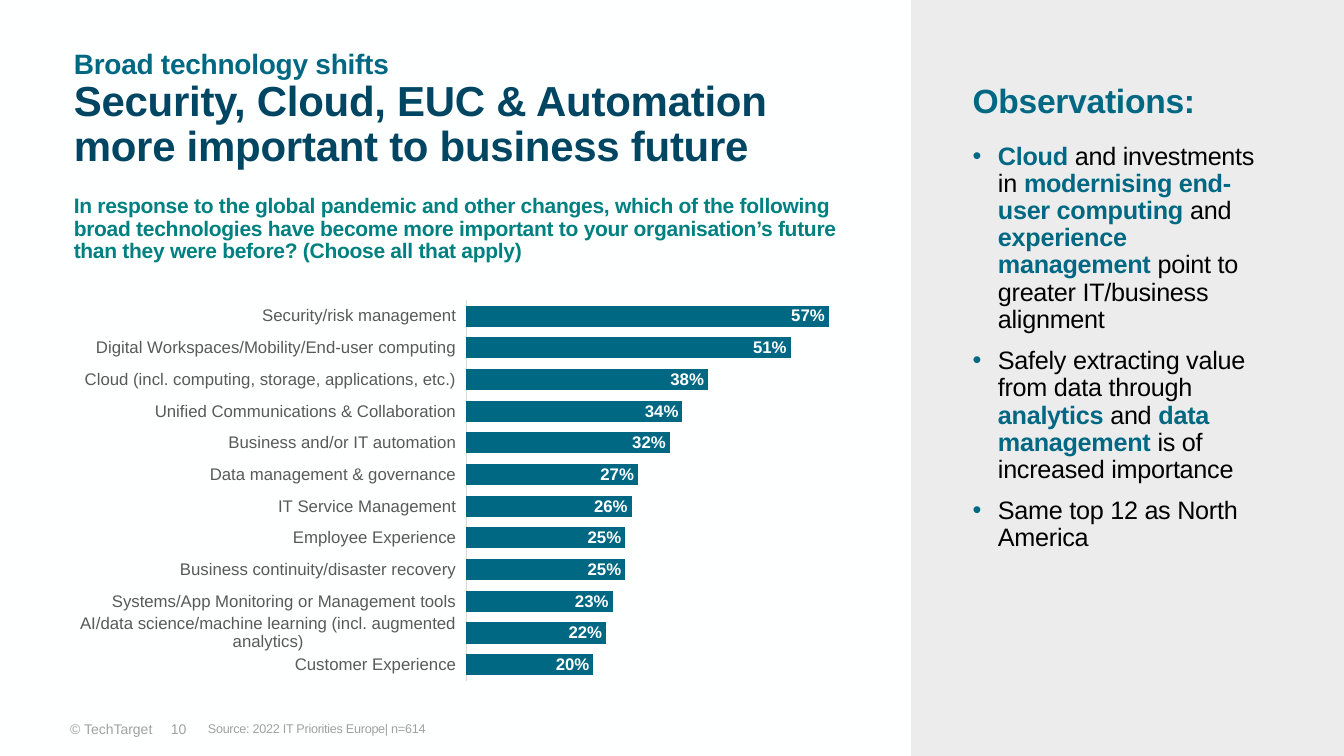
from lxml import etree
from pptx import Presentation
from pptx.chart.data import CategoryChartData
from pptx.dml.color import RGBColor
from pptx.enum.chart import XL_CHART_TYPE, XL_LABEL_POSITION, XL_TICK_LABEL_POSITION, XL_TICK_MARK
from pptx.enum.shapes import MSO_SHAPE
from pptx.enum.text import MSO_ANCHOR, MSO_AUTO_SIZE, PP_ALIGN
from pptx.oxml import parse_xml
from pptx.oxml.ns import nsdecls, qn
from pptx.util import Cm, Pt

BAR = XL_CHART_TYPE.BAR_CLUSTERED
INSIDE_END = XL_LABEL_POSITION.INSIDE_END
LABELS_LOW = XL_TICK_LABEL_POSITION.LOW
NO_TICK = XL_TICK_MARK.NONE
TOP, MIDDLE = MSO_ANCHOR.TOP, MSO_ANCHOR.MIDDLE
LEFT, RIGHT = PP_ALIGN.LEFT, PP_ALIGN.RIGHT

TEAL, NAVY, GREEN = "006883", "004562", "008080"
BLACK, GREY, WHITE = "000000", "A0A0A0", "FEFFFF"


def style(font, size, color, bold=False):
    font.name, font.size, font.bold = "Arial", Pt(size), bold
    font.color.rgb = RGBColor.from_string(color)


def set_box(box, left, top, width, height, inset, anchor=TOP):
    """Place a text shape and return its first paragraph."""
    box.left, box.top, box.width, box.height = Cm(left), Cm(top), Cm(width), Cm(height)
    frame = box.text_frame
    frame.word_wrap, frame.auto_size = True, MSO_AUTO_SIZE.NONE
    frame.vertical_anchor = anchor
    frame.margin_left = frame.margin_right = Cm(inset)
    frame.margin_top = frame.margin_bottom = Cm(min(inset, 0.13))
    para = frame.paragraphs[0]
    para.alignment = LEFT
    return para


deck = Presentation()
deck.slide_width, deck.slide_height = Cm(33.87), Cm(19.05)
page = deck.slides.add_slide(deck.slide_layouts[5])
page.background.fill.solid()
page.background.fill.fore_color.rgb = RGBColor.from_string(WHITE)

# Side panel
panel = page.shapes.add_shape(MSO_SHAPE.RECTANGLE, Cm(22.96), 0, Cm(10.91), Cm(19.05))
panel.shadow.inherit = False
panel.fill.solid()
panel.fill.fore_color.rgb = RGBColor.from_string("ECECEC")
panel.line.fill.background()

# Title with its smaller first line
title = set_box(page.shapes.title, 1.73, 1.32, 20.04, 2.92, 0.13, MIDDLE)
title.line_spacing = 0.9
topic = title.add_run()
topic.text = "Broad technology shifts"
style(topic.font, 20, TEAL, True)
title.add_line_break()
headline = title.add_run()
headline.text = "Security, Cloud, EUC & Automation more important to business future"
style(headline.font, 30, NAVY, True)

# Single-paragraph texts: text, place, inset, anchor, size, colour, bold, alignment
texts = [
    ("In response to the global pandemic and other changes, which of the following broad "
     "technologies have become more important to your organisation’s future than they were "
     "before? (Choose all that apply)",
     (1.73, 4.83, 20.04, 1.9), 0.13, MIDDLE, 15, GREEN, True, LEFT),
    ("Observations:", (24.51, 1.32, 7.62, 2.54), 0, MIDDLE, 24, TEAL, True, LEFT),
    ("Source: 2022 IT Priorities Europe| n=614",
     (5.11, 18.08, 16.59, 0.91), 0.13, TOP, 9, GREY, False, LEFT),
    ("© TechTarget", (1.07, 18.03, 3.02, 0.69), 0.25, TOP, 10, GREY, False, RIGHT),
    ("10", (4.06, 18.03, 1.47, 0.69), 0.25, TOP, 10, GREY, False, LEFT),
]
tight_paras = [title]
for text, place, inset, anchor, size, color, bold, align in texts:
    box = page.shapes.add_textbox(0, 0, 0, 0)
    para = set_box(box, *place, inset, anchor)
    para.alignment = align
    run = para.add_run()
    run.text = text
    style(run.font, size, color, bold)
    if size != 10:
        para.line_spacing = 0.9
        tight_paras.append(para)

# Observations: (text, highlighted) spans per bullet
observations = [
    [("Cloud", True), (" and investments in ", False),
     ("modernising end-user computing ", True), ("and ", False),
     ("experience management ", True),
     ("point to greater IT/business alignment", False)],
    [("Safely extracting value from data through ", False), ("analytics", True),
     (" and ", False), ("data management", True),
     (" is of increased importance", False)],
    [("Same top 12 as North America", False)],
]
notes = page.shapes.add_textbox(0, 0, 0, 0)
first = set_box(notes, 24.51, 3.61, 7.62, 13.46, 0)
for index, spans in enumerate(observations):
    para = notes.text_frame.add_paragraph() if index else first
    para.line_spacing, para.space_after = 0.9, Pt(10)
    props = para._p.get_or_add_pPr()
    props.set("marL", str(Cm(0.64)))
    props.set("indent", str(-Cm(0.64)))
    bullet_color = etree.SubElement(props, qn("a:buClr"))
    etree.SubElement(bullet_color, qn("a:srgbClr")).set("val", TEAL)
    etree.SubElement(props, qn("a:buFont")).set("typeface", "Arial")
    etree.SubElement(props, qn("a:buChar")).set("char", "•")
    for text, highlighted in spans:
        span = para.add_run()
        span.text = text
        style(span.font, 18, TEAL if highlighted else BLACK, highlighted)
    tight_paras.append(para)

# Slightly tightened letter spacing
for para in tight_paras:
    for span in para.runs:
        span.font._element.set("spc", "-20")

# Bar chart, listed from bottom to top
shares = {
    "Customer Experience": 0.20,
    "AI/data science/machine learning (incl. augmented analytics)": 0.22,
    "Systems/App Monitoring or Management tools": 0.23,
    "Business continuity/disaster recovery": 0.25,
    "Employee Experience": 0.25,
    "IT Service Management": 0.26,
    "Data management & governance": 0.27,
    "Business and/or IT automation": 0.32,
    "Unified Communications & Collaboration": 0.34,
    "Cloud (incl. computing, storage, applications, etc.)": 0.38,
    "Digital Workspaces/Mobility/End-user computing": 0.51,
    "Security/risk management": 0.57,
}
data = CategoryChartData(number_format="0%")
data.categories = list(shares)
data.add_series("Series 1", list(shares.values()))
chart = page.shapes.add_chart(BAR, Cm(1.73), Cm(7.37), Cm(20.04), Cm(9.98), data).chart
chart.has_legend = chart.has_title = False
style(chart.font, 10, BLACK)

names = chart.category_axis
names.major_tick_mark = names.minor_tick_mark = NO_TICK
names.tick_label_position = LABELS_LOW
names.format.line.color.rgb = RGBColor.from_string("D9D9D9")
names.format.line.width = Pt(0.75)
style(names.tick_labels.font, 12, "595959")

scale = chart.value_axis
scale.minimum_scale, scale.maximum_scale = 0, 0.6
scale.has_major_gridlines = False
scale.visible = False

plot = chart.plots[0]
plot.gap_width, plot.vary_by_categories = 50, False
bars = plot.series[0]
bars.format.fill.solid()
bars.format.fill.fore_color.rgb = RGBColor.from_string(TEAL)
labels = bars.data_labels
labels.show_value, labels.position = True, INSIDE_END
labels.number_format, labels.number_format_is_linked = "0%", False
style(labels.font, 12, WHITE, True)

# Fixed plot area, leaving the left half to the category names
plot_area = chart._chartSpace.chart.plotArea
for old_layout in plot_area.findall(qn("c:layout")):
    plot_area.remove(old_layout)
plot_area.insert(0, parse_xml(
    f'<c:layout {nsdecls("c")}><c:manualLayout><c:layoutTarget val="inner"/>'
    '<c:xMode val="edge"/><c:yMode val="edge"/><c:x val="0.5"/><c:y val="0.02"/>'
    '<c:w val="0.48"/><c:h val="0.96"/></c:manualLayout></c:layout>'))

deck.save("out.pptx")
